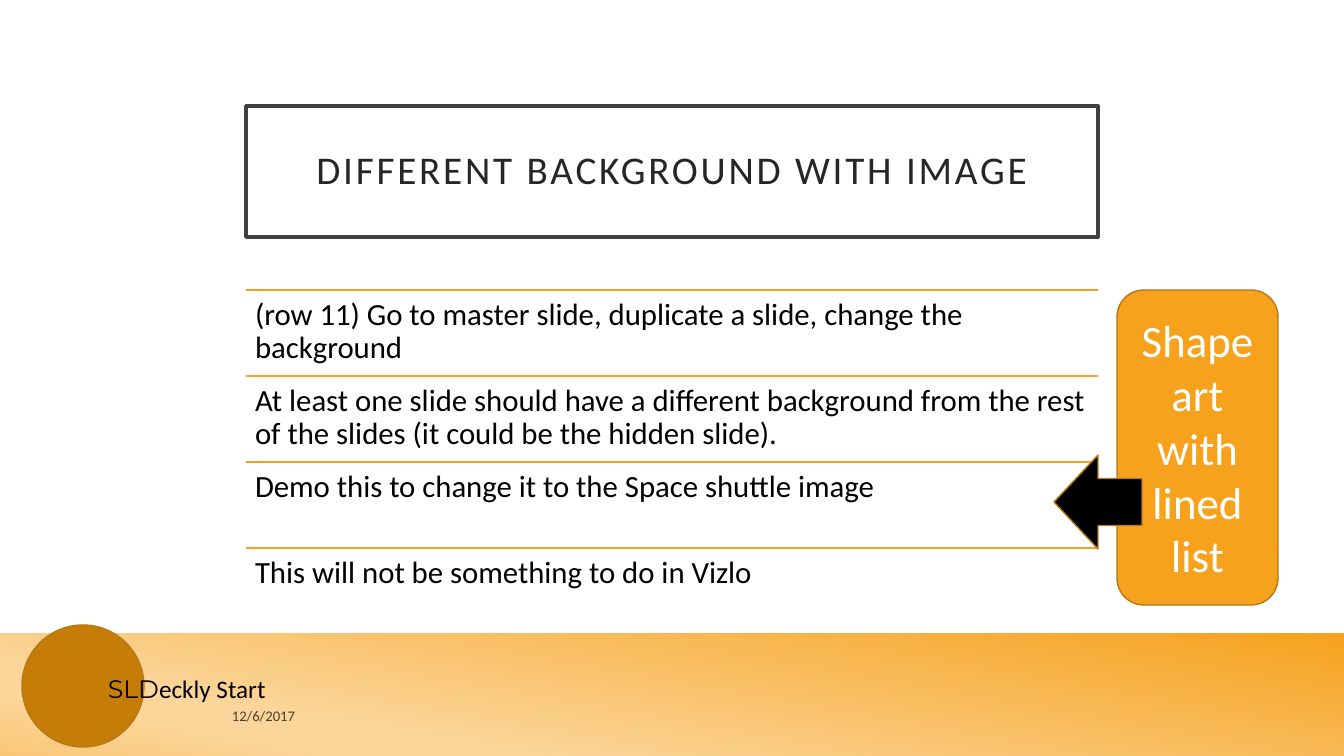
from dataclasses import dataclass
from typing import NamedTuple

from lxml.etree import SubElement
from pptx import Presentation
from pptx.dml.color import RGBColor
from pptx.enum.shapes import MSO_CONNECTOR as Conn, MSO_SHAPE as Kind
from pptx.enum.text import MSO_ANCHOR as Anchor, MSO_AUTO_SIZE as Auto, PP_ALIGN as Align
from pptx.oxml.ns import qn
from pptx.util import Emu, Pt

SCALE = 914400 / 100.8  # EMU per px
ORANGE, BROWN, BLACK, WHITE = "F6A21D", "B67815", "000000", "FFFFFF"


class Box(NamedTuple):
    x: int
    y: int
    w: int
    h: int


@dataclass
class Run:
    text: str
    size: float
    color: str = BLACK
    face: str = "Calibri"
    alpha: int = 100


@dataclass
class Form:
    kind: Kind
    box: Box
    fill: str
    line: str = ""
    alpha: int = 100


def px(n: int) -> Emu:
    return Emu(round(n * SCALE))


def rgb(code: str) -> RGBColor:
    return RGBColor.from_string(code)


def fade(node, alpha: int) -> None:
    """Make the first colour under node see-through."""
    if alpha < 100:
        tint = next(node.iter(qn("a:srgbClr")))
        SubElement(tint, qn("a:alpha"), val=str(alpha * 1000))


def paint(shape, fill: str, line: str = "", width: float = 1, alpha: int = 100) -> None:
    shape.fill.solid()
    shape.fill.fore_color.rgb = rgb(fill)
    fade(shape._element.spPr, alpha)
    if line:
        shape.line.color.rgb = rgb(line)
        shape.line.width = Pt(width)
    else:
        shape.line.fill.background()


def draw(form: Form):
    shape = shapes.add_shape(form.kind, *map(px, form.box))
    shape.shadow.inherit = False
    paint(shape, form.fill, form.line, alpha=form.alpha)
    return shape


def write(shape, runs: list[Run], align=Align.LEFT, anchor=Anchor.TOP,
          inset: int = 0, space: float = 1, wrap: bool = True):
    frame = shape.text_frame
    frame.word_wrap, frame.auto_size = wrap, Auto.NONE
    frame.vertical_anchor = anchor
    if inset:
        frame.margin_left = frame.margin_right = px(inset)
        frame.margin_top = frame.margin_bottom = px(inset)
    para = frame.paragraphs[0]
    para.alignment, para.line_spacing = align, space
    for item in runs:
        run = para.add_run()
        run.text = item.text
        font = run.font
        font.name, font.size = item.face, Pt(item.size)
        font.color.rgb = rgb(item.color)
        fade(run._r, item.alpha)
    return para


def text(box: Box, runs: list[Run], **style) -> None:
    write(shapes.add_textbox(*map(px, box)), runs, **style)


def rule(x: int, y: int, w: int) -> None:
    line = shapes.add_connector(Conn.STRAIGHT, px(x), px(y), px(x + w), px(y))
    line.line.color.rgb = rgb(ORANGE)
    line.line.width = Pt(1)
    SubElement(line._element.spPr, qn("a:effectLst"))


def blend(shape, stops: list[tuple[int, str]], angle: int) -> None:
    shape.fill.gradient()
    grad = shape._element.spPr.find(qn("a:gradFill"))
    for node in list(grad):
        grad.remove(node)
    group = SubElement(grad, qn("a:gsLst"))
    for pos, code in stops:
        stop = SubElement(group, qn("a:gs"), pos=str(pos * 1000))
        SubElement(stop, qn("a:srgbClr"), val=code)
    SubElement(grad, qn("a:lin"), ang=str(angle * 60000), scaled="0")


prs = Presentation()
prs.slide_width, prs.slide_height = px(1344), px(756)
slide = prs.slides.add_slide(prs.slide_layouts[5])
shapes = slide.shapes

# Footer band and brand mark
band = draw(Form(Kind.RECTANGLE, Box(0, 633, 1344, 123), ORANGE))
blend(band, [(0, ORANGE), (74, "FBD599"), (83, "FBD599"), (100, "FAC777")], 100)
draw(Form(Kind.OVAL, Box(22, 625, 122, 122), "C67D08", BROWN))
text(Box(98, 668, 195, 72),
     [Run("SLD", 18, face="Montserrat"), Run("eckly Start", 18)], wrap=False)

# Title
title = shapes.title
title.left, title.top, title.width, title.height = map(px, Box(246, 106, 852, 131))
paint(title, WHITE, "404040", 2.5, 75)
head = write(title, [Run("DIFFERENT BACKGROUND WITH IMAGE", 28, "262626")],
             Align.CENTER, Anchor.MIDDLE, 20, 0.9)
head.runs[0].font._element.set("spc", "200")

# Lined list
LIST = Box(246, 290, 852, 321)
STEP = 86
ROWS = [
    "(row 11) Go to master slide, duplicate a slide, change the background",
    "At least one slide should have a different background from the rest "
    "of the slides (it could be the hidden slide).",
    "Demo this to change it to the Space shuttle image",
    "This will not be something to do in Vizlo",
]
draw(Form(Kind.RECTANGLE, LIST, WHITE, alpha=57))
for i, row in enumerate(ROWS):
    top = LIST.y + i * STEP
    rule(LIST.x, top, LIST.w)
    text(Box(LIST.x, top, LIST.w, STEP), [Run(row, 22)], inset=9, space=0.9)

# Date
text(Box(222, 698, 89, 35), [Run("12/6/2017", 10.5, alpha=70)], anchor=Anchor.MIDDLE)

# Callout with its arrow
note = draw(Form(Kind.ROUNDED_RECTANGLE, Box(1117, 290, 161, 315), ORANGE, BROWN))
write(note, [Run("Shape art with lined list", 32, WHITE)], Align.CENTER, Anchor.MIDDLE)
draw(Form(Kind.LEFT_ARROW, Box(1054, 455, 88, 94), BLACK, BROWN))

prs.save("out.pptx")
